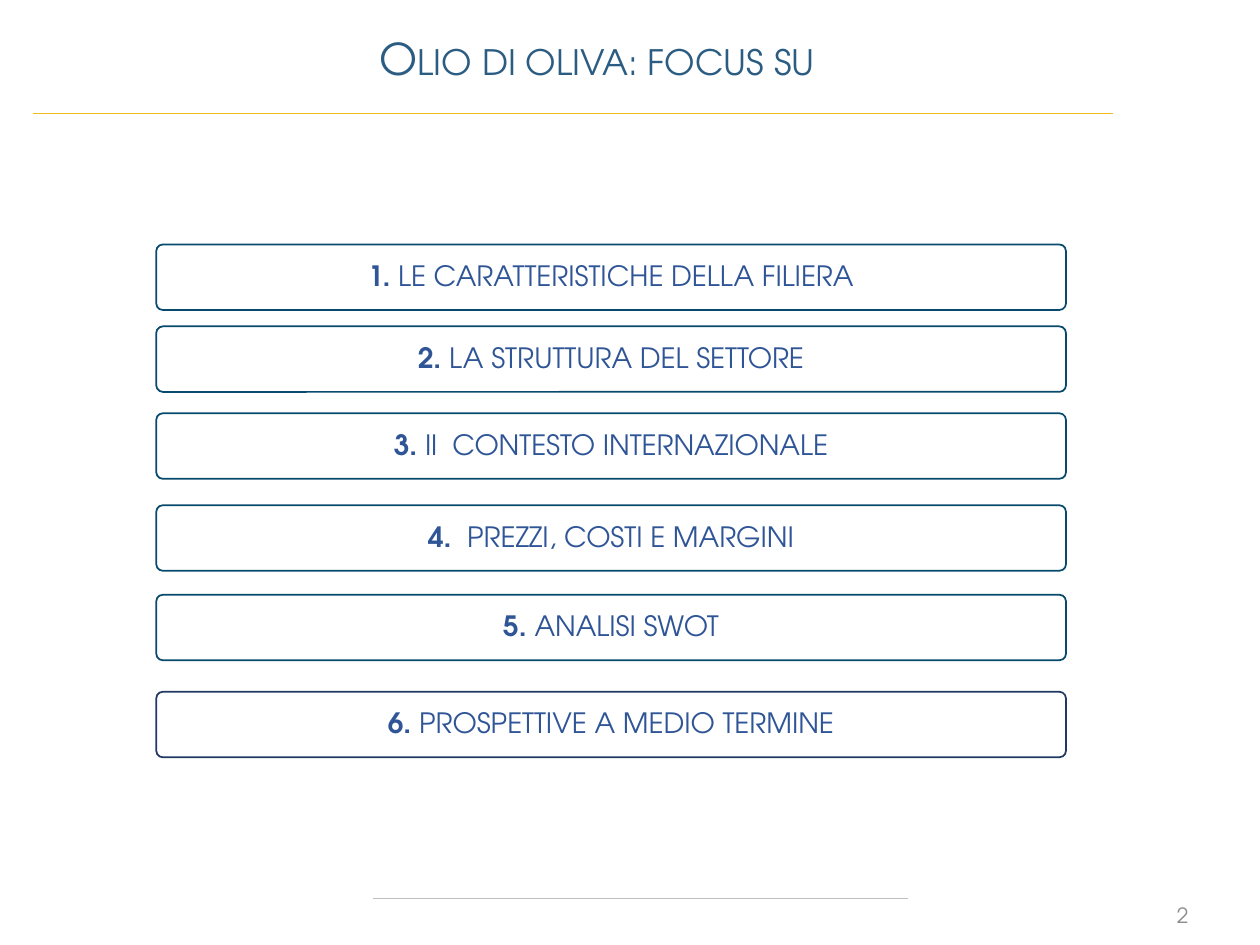
from pptx import Presentation
from pptx.dml.color import RGBColor
from pptx.enum.shapes import MSO_CONNECTOR, MSO_SHAPE
from pptx.enum.text import MSO_ANCHOR, PP_ALIGN
from pptx.oxml.ns import qn
from pptx.util import Inches, Pt
from lxml import etree

STRAIGHT = MSO_CONNECTOR.STRAIGHT
ROUNDED = MSO_SHAPE.ROUNDED_RECTANGLE
MIDDLE = MSO_ANCHOR.MIDDLE
CENTER, RIGHT = PP_ALIGN.CENTER, PP_ALIGN.RIGHT

WHITE = RGBColor(0xFF, 0xFF, 0xFF)
TITLE_BLUE = RGBColor(0x2B, 0x5C, 0x82)
TOPIC_BLUE = RGBColor(0x2F, 0x55, 0x97)
BORDER_TEAL = RGBColor(0x08, 0x4A, 0x6E)
BORDER_NAVY = RGBColor(0x20, 0x38, 0x64)
GOLD = RGBColor(0xED, 0xBC, 0x20)
LIGHT_GREY = RGBColor(0xBF, 0xBF, 0xBF)
GREY = RGBColor(0x8C, 0x8C, 0x8C)

FONT = "TeX Gyre Adventor"

# One column of topic boxes
COLUMN_LEFT, COLUMN_WIDTH, ROW_HEIGHT = 1.24, 7.22, 0.52

# Row top, number, topic, border
TOPICS = [
    (1.94, "1. ", "LE CARATTERISTICHE DELLA FILIERA", BORDER_TEAL),
    (2.59, "2. ", "LA STRUTTURA DEL SETTORE", BORDER_TEAL),
    (3.28, "3. ", "Il  CONTESTO INTERNAZIONALE", BORDER_TEAL),
    (4.01, "4.  ", "PREZZI, COSTI E MARGINI", BORDER_TEAL),
    (4.72, "5. ", "ANALISI SWOT", BORDER_TEAL),
    (5.49, "6. ", "PROSPETTIVE A MEDIO TERMINE", BORDER_NAVY),
]


def write(holder, text, size, color, lead="", align=CENTER, spacing=1.0,
          small_caps=False):
    """Write one line of text, after an optional bold lead."""
    frame = holder.text_frame
    frame.word_wrap = True
    frame.vertical_anchor = MIDDLE
    paragraph = frame.paragraphs[0]
    paragraph.alignment = align
    paragraph.line_spacing = spacing
    for part, bold in ((lead, True), (text, False)):
        if not part:
            continue
        run = paragraph.add_run()
        run.text = part
        run.font.name = FONT
        run.font.size = Pt(size)
        run.font.bold = bold
        run.font.color.rgb = color
        if small_caps:
            run.font._element.set("cap", "small")


def add_label(slide, text, left, top, width, height, **text_format):
    box = slide.shapes.add_textbox(*map(Inches, (left, top, width, height)))
    write(box, text, **text_format)


def add_rule(slide, left, right, y, color, weight):
    rule = slide.shapes.add_connector(
        STRAIGHT, Inches(left), Inches(y), Inches(right), Inches(y))
    rule.line.color.rgb = color
    rule.line.width = Pt(weight)
    etree.SubElement(rule._element.spPr, qn("a:effectLst"))


def add_topic(slide, top, number, topic, border):
    box = slide.shapes.add_shape(
        ROUNDED, *map(Inches, (COLUMN_LEFT, top, COLUMN_WIDTH, ROW_HEIGHT)))
    box.adjustments[0] = 0.1
    box.shadow.inherit = False
    box.fill.solid()
    box.fill.fore_color.rgb = WHITE
    box.line.color.rgb = border
    box.line.width = Pt(1)
    write(box, topic, lead=number, size=16, color=TOPIC_BLUE, spacing=0.9)


def main():
    deck = Presentation()
    deck.slide_width, deck.slide_height = Inches(10), Inches(7.5)
    slide = deck.slides.add_slide(deck.slide_layouts[6])

    # Footer and header rules
    add_rule(slide, 2.96, 7.21, 7.13, LIGHT_GREY, 0.25)
    add_rule(slide, 0.26, 8.83, 0.9, GOLD, 0.5)

    # Title and page number
    add_label(slide, "Olio di oliva: focus su", 0.39, 0.21, 8.7, 0.55,
              size=25, color=TITLE_BLUE, spacing=0.9, small_caps=True)
    add_label(slide, "2", 9.09, 7.13, 0.44, 0.26,
              size=12, color=GREY, align=RIGHT)

    # Agenda
    for topic in TOPICS:
        add_topic(slide, *topic)

    deck.save("out.pptx")


if __name__ == "__main__":
    main()
